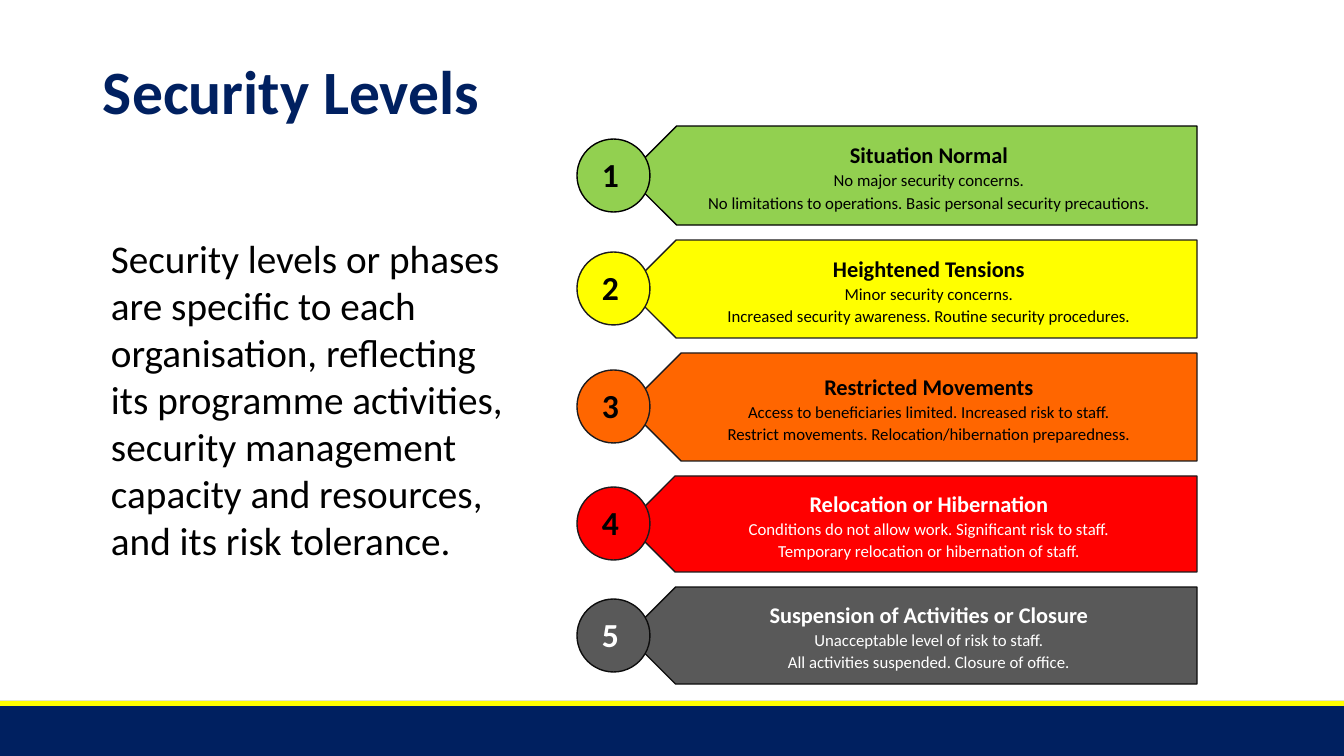
import pptx
import pptx.dml.color
import pptx.enum.shapes
import pptx.enum.text
import pptx.util

RGBColor = pptx.dml.color.RGBColor
Shape = pptx.enum.shapes.MSO_SHAPE
Align = pptx.enum.text.PP_ALIGN
Anchor = pptx.enum.text.MSO_ANCHOR

WHITE = RGBColor(0xFF, 0xFF, 0xFF)
BLACK = RGBColor(0x00, 0x00, 0x00)
NAVY = RGBColor(0x00, 0x20, 0x60)
YELLOW = RGBColor(0xFF, 0xFF, 0x00)
GREEN = RGBColor(0x92, 0xD0, 0x50)
ORANGE = RGBColor(0xFF, 0x66, 0x00)
RED = RGBColor(0xFF, 0x00, 0x00)
GREY = RGBColor(0x59, 0x59, 0x59)
CHARCOAL = RGBColor(0x1D, 0x1B, 0x1D)
NEAR_BLACK = RGBColor(0x0D, 0x0D, 0x0D)

PAGE_WIDTH, PAGE_HEIGHT = 1344, 756
FIRST_TOP, ROW_GAP = 126, 15
CIRCLE_SIZE = 73

LEVELS = [
    (99, GREEN, BLACK, BLACK, BLACK, "Situation Normal",
     "No major security concerns.",
     "No limitations to operations. Basic personal security precautions."),
    (98, YELLOW, CHARCOAL, BLACK, BLACK, "Heightened Tensions",
     "Minor security concerns.",
     "Increased security awareness. Routine security procedures."),
    (108, ORANGE, CHARCOAL, BLACK, BLACK, "Restricted Movements",
     "Access to beneficiaries limited. Increased risk to staff.",
     "Restrict movements. Relocation/hibernation preparedness."),
    (96, RED, CHARCOAL, BLACK, WHITE, "Relocation or Hibernation",
     "Conditions do not allow work. Significant risk to staff.",
     "Temporary relocation or hibernation of staff."),
    (97, GREY, NEAR_BLACK, WHITE, WHITE, "Suspension of Activities or Closure",
     "Unacceptable level of risk to staff.",
     "All activities suspended. Closure of office."),
]


def px(length):
    return pptx.util.Emu(round(length * 914400 / 100.8))


class SlideBuilder:
    font_name = "Calibri"

    def __init__(self, page):
        self.page = page

    def shape(self, kind, left, top, width, height, fill, outline=None, rotation=0):
        shape = self.page.shapes.add_shape(
            kind, px(left), px(top), px(width), px(height))
        shape.shadow.inherit = False
        shape.rotation = rotation
        shape.fill.solid()
        shape.fill.fore_color.rgb = fill
        if outline is None:
            shape.line.fill.background()
        else:
            shape.line.color.rgb = outline
            shape.line.width = pptx.util.Pt(1)

    def text(self, left, top, width, height, lines, color, align=Align.LEFT,
             anchor=Anchor.TOP, spacing=1.0, insets=(10, 5, 10, 5)):
        box = self.page.shapes.add_textbox(px(left), px(top), px(width), px(height))
        frame = box.text_frame
        frame.word_wrap = True
        frame.vertical_anchor = anchor
        (frame.margin_left, frame.margin_top,
         frame.margin_right, frame.margin_bottom) = map(px, insets)
        for index, (words, size, bold) in enumerate(lines):
            para = frame.add_paragraph() if index else frame.paragraphs[0]
            para.text = words
            para.alignment = align
            para.line_spacing = spacing
            para.font.name = self.font_name
            para.font.size = pptx.util.Pt(size)
            para.font.bold = bold
            para.font.color.rgb = color

    def level(self, number, top, height, fill, outline, number_color,
              text_color, heading, *details):
        self.shape(Shape.PENTAGON, 627, top, 570, height, fill, outline, 180)
        lines = [(heading, 16, True)] + [(detail, 12, False) for detail in details]
        self.text(651, top, 546, height, lines, text_color, Align.CENTER,
                  Anchor.MIDDLE, 1.1, (22, 7, 12, 7))
        circle_top = top + (height - CIRCLE_SIZE) // 2
        self.shape(Shape.OVAL, 577, circle_top, CIRCLE_SIZE, CIRCLE_SIZE, fill, outline)
        self.text(591, circle_top + 10, 39, 50, [(str(number), 24, True)],
                  number_color, Align.CENTER, insets=(0, 5, 0, 5))


def main():
    deck = pptx.Presentation()
    deck.slide_width = px(PAGE_WIDTH)
    deck.slide_height = px(PAGE_HEIGHT)
    builder = SlideBuilder(deck.slides.add_slide(deck.slide_layouts[6]))

    builder.shape(Shape.RECTANGLE, 0, 701, PAGE_WIDTH, 55, NAVY)
    builder.shape(Shape.RECTANGLE, 0, 701, PAGE_WIDTH, 5, YELLOW)
    builder.text(93, 22, 1159, 146, [("Security Levels", 44, True)], NAVY,
                 anchor=Anchor.MIDDLE, spacing=0.9)

    top = FIRST_TOP
    for number, (height, *details) in enumerate(LEVELS, start=1):
        builder.level(number, top, height, *details)
        top += height + ROW_GAP

    statement = ("Security levels or phases are specific to each organisation, "
                 "reflecting its programme activities, security management capacity "
                 "and resources, and its risk tolerance.")
    builder.text(101, 229, 415, 378, [(statement, 28, False)], BLACK)
    deck.save("out.pptx")


if __name__ == "__main__":
    main()
